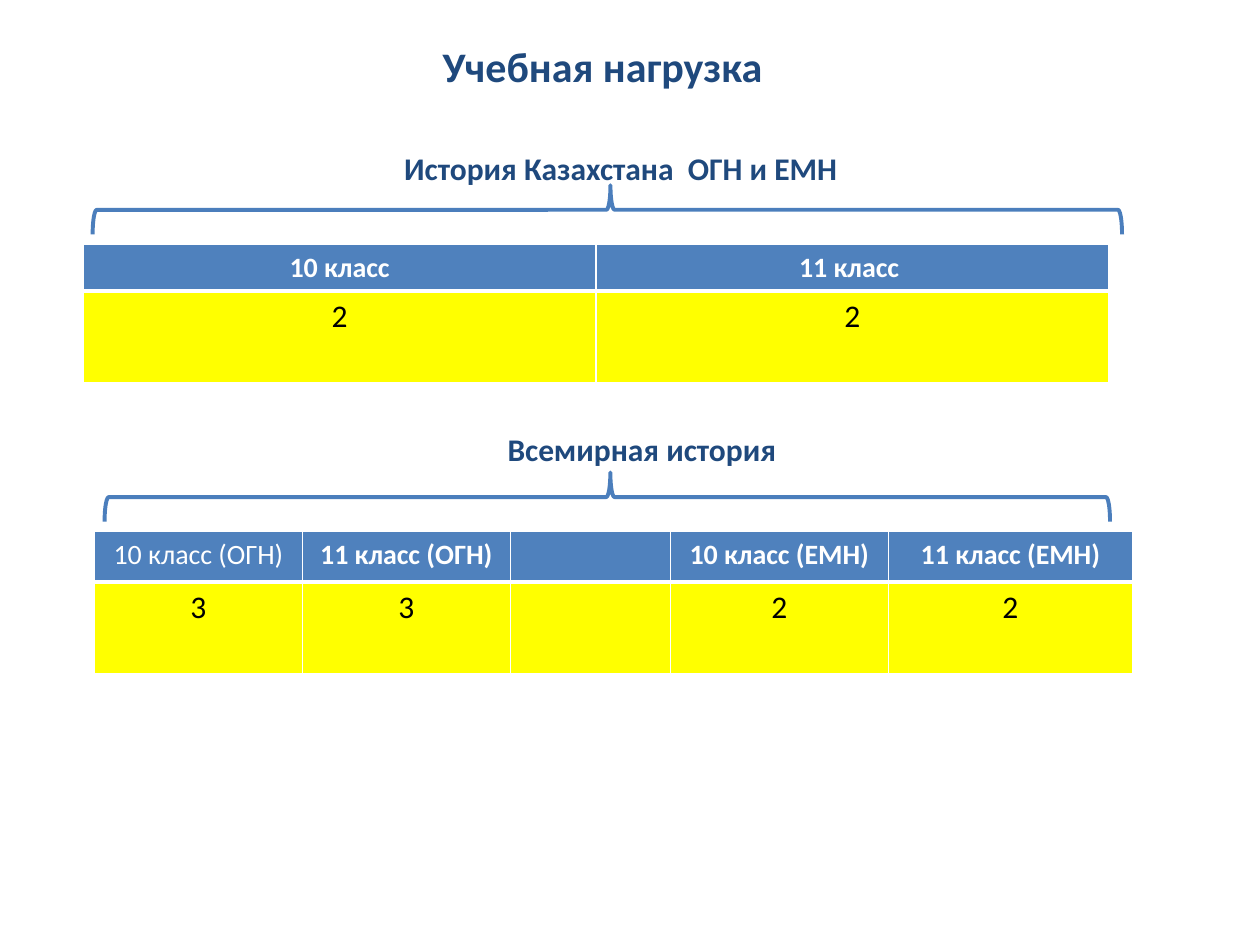
"""Build the study load slide with two braced tables."""
from dataclasses import dataclass

from lxml import etree
from pptx import Presentation
from pptx import util as u
from pptx.dml.color import RGBColor
from pptx.enum import shapes, text
from pptx.oxml import ns

NAVY, BLUE, BRACE, YELLOW = "1F497D", "4F81BD", "4B7EBC", "FFFF00"
WHITE, BLACK = "FFFFFF", "000000"
CENTER, LEFT = text.PP_ALIGN.CENTER, text.PP_ALIGN.LEFT


@dataclass
class Label:
    content: str
    box: tuple[float, float, float, float]
    size: int = 18
    align: text.PP_ALIGN = LEFT
    wrap: bool = True


@dataclass
class Load:
    label: Label
    brace_top: float
    brace_width: float
    left: float
    top: float
    columns: list[float]
    classes: list[str]
    hours: list[str]
    plain_columns: tuple[int, ...] = ()


TITLE = Label("Учебная нагрузка ", (0.83, 0.21, 7.98, 0.63), 24, CENTER)
LOADS = [
    Load(Label("История Казахстана  ОГН и ЕМН", (3.11, 1.13, 4.55, 0.4)),
         1.47, 8.17, 0.66, 1.94, [4.07, 4.07],
         ["10 класс", "11 класс "], ["2", "2"]),
    Load(Label("Всемирная история", (3.93, 3.36, 2.35, 0.4), wrap=False),
         3.75, 7.98, 0.75, 4.22, [1.65, 1.65, 1.27, 1.73, 1.94],
         ["10 класс (ОГН)", "11 класс (ОГН)", "", "10 класс (ЕМН)", "11 класс (ЕМН)"],
         ["3", "3", "", "2", "2"], (0,)),
]
ROW_HEIGHTS = (0.37, 0.73)
BRACE_CENTER, BRACE_DEPTH = 4.82, 0.39


def rgb(color: str) -> RGBColor:
    return RGBColor.from_string(color)


def write(tf, content: str, size: int, color: str, bold: bool, align) -> None:
    p = tf.paragraphs[0]
    p.alignment = align
    r = p.add_run()
    r.text = content
    for name, value in dict(name="Calibri", size=u.Pt(size), bold=bold).items():
        setattr(r.font, name, value)
    r.font.color.rgb = rgb(color)


def add_label(s, label: Label) -> None:
    tf = s.shapes.add_textbox(*map(u.Inches, label.box)).text_frame
    frame = dict(word_wrap=label.wrap, vertical_anchor=text.MSO_ANCHOR.MIDDLE)
    for name, value in frame.items():
        setattr(tf, name, value)
    write(tf, label.content, label.size, NAVY, True, label.align)


def add_brace(s, top: float, width: float) -> None:
    left = BRACE_CENTER - BRACE_DEPTH / 2
    middle = top + BRACE_DEPTH / 2
    sp = s.shapes.add_shape(
        shapes.MSO_SHAPE.LEFT_BRACE,
        *map(u.Inches, (left, middle - width / 2, BRACE_DEPTH, width)))
    sp.rotation = 90
    sp.shadow.inherit = False
    sp.adjustments[0], sp.adjustments[1] = 0.083, 0.497
    sp.fill.background()
    sp.line.color.rgb = rgb(BRACE)
    sp.line.width = u.Pt(2.25)


def add_borders(cell, widths: dict[str, int]) -> None:
    tc_pr = cell._tc.get_or_add_tcPr()
    for side, width in widths.items():
        ln = etree.SubElement(tc_pr, ns.qn(f"a:ln{side}"), w=str(u.Pt(width)))
        fill = etree.SubElement(ln, ns.qn("a:solidFill"))
        etree.SubElement(fill, ns.qn("a:srgbClr"), val=WHITE)


def fill_cell(cell, content: str, header: bool, bold: bool) -> None:
    size, color, fill = (16, WHITE, BLUE) if header else (18, BLACK, YELLOW)
    add_borders(cell, dict(L=1, R=1, T=1 if header else 3, B=3 if header else 1))
    cell.fill.solid()
    cell.fill.fore_color.rgb = rgb(fill)
    write(cell.text_frame, content, size, color, bold, CENTER)


def add_load(s, load: Load) -> None:
    add_label(s, load.label)
    add_brace(s, load.brace_top, load.brace_width)
    box = (load.left, load.top, sum(load.columns), sum(ROW_HEIGHTS))
    table = s.shapes.add_table(2, len(load.columns), *map(u.Inches, box)).table
    for column, width in zip(table.columns, load.columns):
        column.width = u.Inches(width)
    for row, height in zip(table.rows, ROW_HEIGHTS):
        row.height = u.Inches(height)
    for i, values in enumerate((load.classes, load.hours)):
        for j, value in enumerate(values):
            header = i == 0
            fill_cell(table.cell(i, j), value, header,
                      header and j not in load.plain_columns)


def main() -> None:
    prs = Presentation()
    prs.slide_width, prs.slide_height = u.Inches(10), u.Inches(7.5)
    s = prs.slides.add_slide(prs.slide_layouts[6])
    add_label(s, TITLE)
    for load in LOADS:
        add_load(s, load)
    prs.save("out.pptx")


if __name__ == "__main__":
    main()
